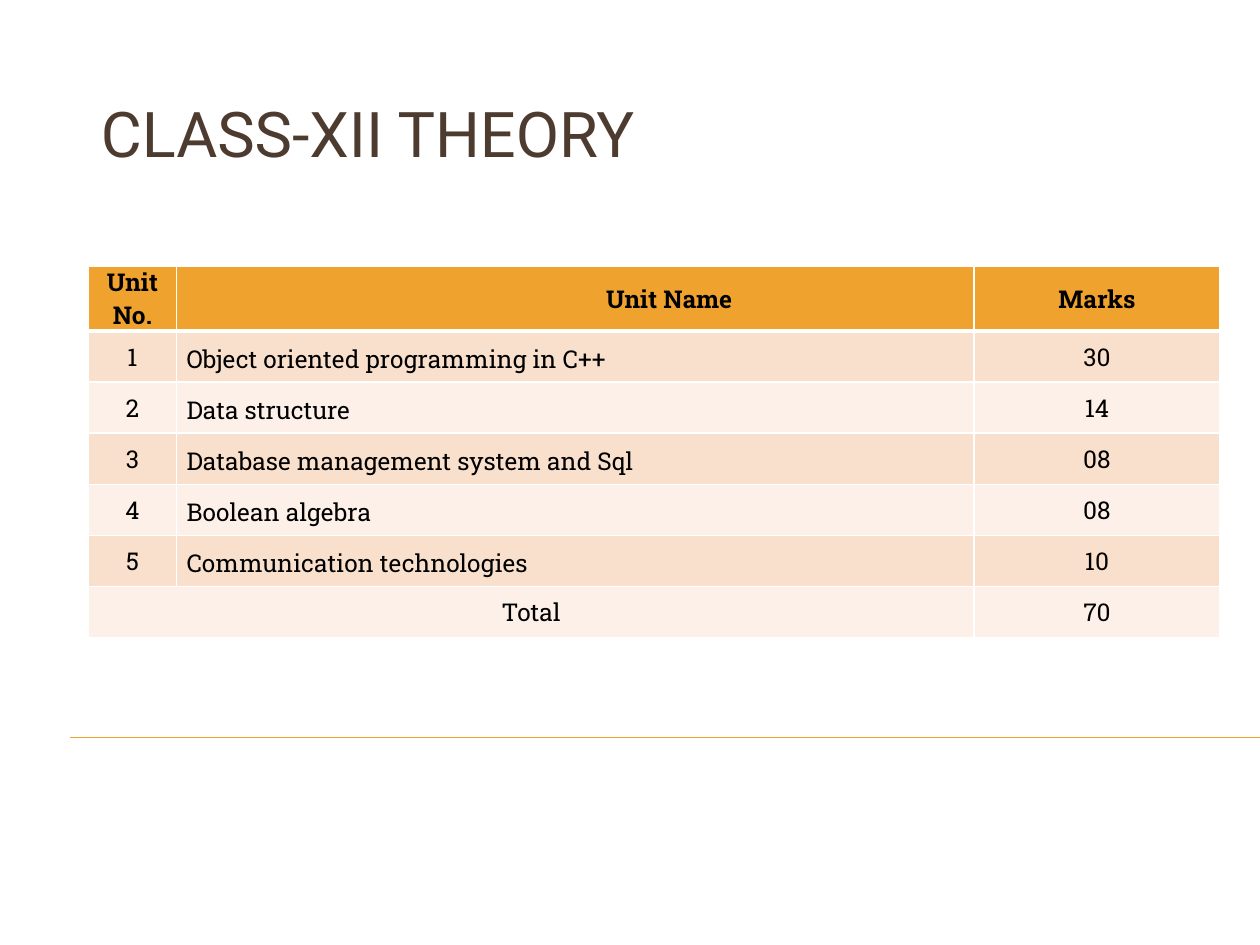
from lxml import etree
from pptx import Presentation
from pptx.dml.color import RGBColor
from pptx.enum import shapes, text
from pptx.oxml.ns import qn
from pptx.util import Cm, Pt

GOLD, WHITE, BROWN = "F0A22E", "FFFFFF", "4E3B30"
BANDS = ["F9E0CD", "FCF0E8"]
LEFT, MID, RIGHT = text.PP_ALIGN.LEFT, text.PP_ALIGN.CENTER, text.PP_ALIGN.RIGHT
HEAD = ["Unit No.", "Unit Name", "Marks"]
UNITS = [
    ["1", "Object oriented programming in C++", "30"],
    ["2", "Data structure", "14"],
    ["3", "Database management system and Sql", "08"],
    ["4", "Boolean algebra", "08"],
    ["5", "Communication technologies", "10"],
    ["Total", "", "70"],
]


def tint(code):
    return RGBColor.from_string(code)


def write(frame, words, size=14, font="Roboto Slab", color="000000",
          bold=False, align=MID, space=None):
    para = frame.paragraphs[0]
    para.alignment, para.line_spacing = align, space
    run = para.add_run()
    run.text = words
    run.font.size, run.font.name, run.font.bold = Pt(size), font, bold
    run.font.color.rgb = tint(color)


def edge(cell, base):
    """Draw white cell borders, with the bottom one base points wide."""
    props = cell._tc.get_or_add_tcPr()
    for side, width in zip("LRTB", (1, 1, 1, base)):
        line = etree.SubElement(props, qn(f"a:ln{side}"), w=str(Pt(width)))
        fill = etree.SubElement(line, qn("a:solidFill"))
        etree.SubElement(fill, qn("a:srgbClr"), val=WHITE)


def style(cell, fill, base=1, left=0, right=0):
    edge(cell, base)
    cell.fill.solid()
    cell.fill.fore_color.rgb = tint(fill)
    cell.vertical_anchor = text.MSO_ANCHOR.MIDDLE
    cell.margin_top = cell.margin_bottom = 0
    cell.margin_left, cell.margin_right = Cm(left), Cm(right)


def title(slide, x, y, w, h):
    head = slide.shapes.title
    head.left, head.top, head.width, head.height = Cm(x), Cm(y), Cm(w), Cm(h)
    head.text_frame.vertical_anchor = text.MSO_ANCHOR.TOP
    write(head.text_frame, "CLASS-XII THEORY", size=36, font="Roboto",
          color=BROWN, align=LEFT)


def rule(slide, x, y, w):
    line = slide.shapes.add_connector(
        shapes.MSO_CONNECTOR.STRAIGHT, Cm(x), Cm(y), Cm(x + w), Cm(y))
    line.line.color.rgb = tint(GOLD)
    line.line.width = Pt(0.75)
    etree.SubElement(line._element.spPr, qn("a:effectLst"))


def marks(slide, x, y, w, h):
    """Place the table of units and their marks."""
    count = len(UNITS) + 1
    grid = slide.shapes.add_table(
        count, len(HEAD), Cm(x), Cm(y), Cm(w), Cm(h)).table
    first, last = 1.78, 4.95
    for col, width in zip(grid.columns, (first, w - first - last, last)):
        col.width = Cm(width)
    for row in grid.rows:
        row.height = Cm(h / count)

    for c, words in enumerate(HEAD):
        cell = grid.cell(0, c)
        name = c == 1
        style(cell, GOLD, base=3, right=4.88 if name else 0)
        write(cell.text_frame, words, bold=True, align=RIGHT if name else MID)

    for r, unit in enumerate(UNITS, 1):
        for c, words in enumerate(unit):
            cell = grid.cell(r, c)
            name = c == 1
            style(cell, BANDS[(r - 1) % 2], left=0.2 if name else 0)
            if words:
                write(cell.text_frame, words, align=LEFT if name else MID,
                      space=1.15 if name else None)
    grid.cell(count - 1, 0).merge(grid.cell(count - 1, 1))


def main():
    deck = Presentation()
    deck.slide_width, deck.slide_height = Cm(25.4), Cm(19.05)
    slide = deck.slides.add_slide(deck.slide_layouts[0])
    sub = slide.placeholders[1]._element
    sub.getparent().remove(sub)
    rule(slide, 1.42, 14.86, 23.98)
    title(slide, 1.78, 1.78, 21.59, 4.09)
    marks(slide, 1.78, 5.36, 22.81, 7.21)
    deck.save("out.pptx")


if __name__ == "__main__":
    main()
